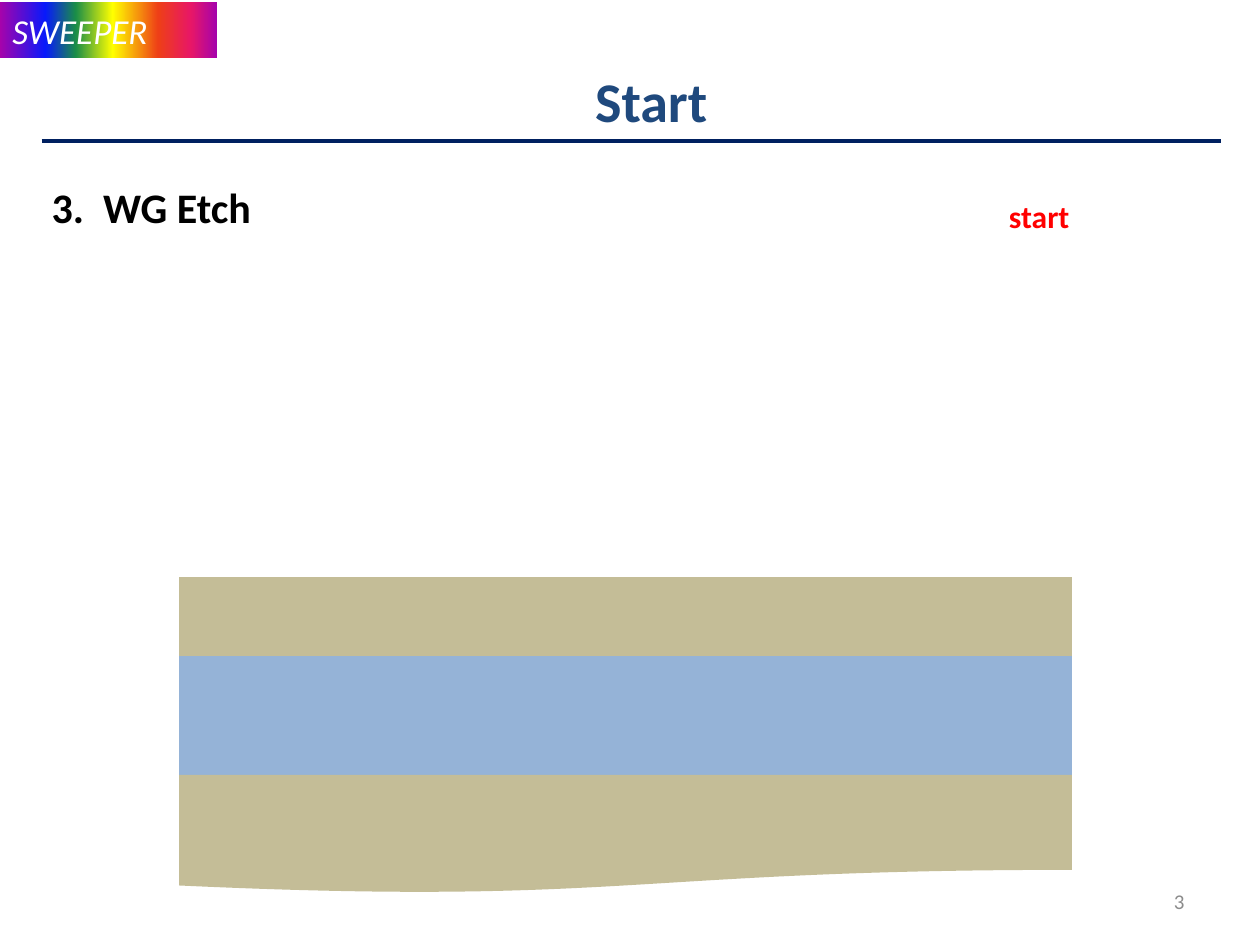
from dataclasses import dataclass

from lxml import etree
from pptx import Presentation
from pptx.dml.color import RGBColor
from pptx.enum import shapes, text
from pptx.oxml import parse_xml
from pptx.oxml.ns import nsdecls, qn
from pptx.util import Cm, Pt

FONT = "Calibri"
WHITE = RGBColor(0xFF, 0xFF, 0xFF)
BLACK = RGBColor(0x00, 0x00, 0x00)
RED = RGBColor(0xFF, 0x00, 0x00)
GREY = RGBColor(0x8C, 0x8C, 0x8C)
TITLE_BLUE = RGBColor(0x1F, 0x49, 0x7D)
RULE_NAVY = RGBColor(0x00, 0x20, 0x60)
SAND = RGBColor(0xC4, 0xBD, 0x97)
SKY = RGBColor(0x95, 0xB3, 0xD7)

VIOLET = RGBColor(0xA6, 0x03, 0xAB)
RAINBOW = [
    (0, VIOLET),
    (21, RGBColor(0x08, 0x19, 0xFB)),
    (35, RGBColor(0x1A, 0x8D, 0x48)),
    (52, RGBColor(0xFF, 0xFF, 0x00)),
    (73, RGBColor(0xEE, 0x3F, 0x17)),
    (88, RGBColor(0xE8, 0x17, 0x66)),
    (100, VIOLET),
]

STACK_LEFT, STACK_TOP, STACK_WIDTH = 3.61, 11.63, 18.0


@dataclass
class Layer:
    kind: shapes.MSO_SHAPE
    height: float
    color: RGBColor


@dataclass
class Label:
    words: str
    left: float
    top: float
    width: float
    height: float
    size: int
    color: RGBColor
    bold: bool = True
    wrap: bool = False
    align: text.PP_ALIGN = text.PP_ALIGN.LEFT
    anchor: text.MSO_ANCHOR = text.MSO_ANCHOR.TOP
    hanging: float = 0


# From the top of the wafer down
LAYERS = [
    Layer(shapes.MSO_SHAPE.FLOWCHART_PROCESS, 1.6, SAND),
    Layer(shapes.MSO_SHAPE.FLOWCHART_PROCESS, 2.39, SKY),
    Layer(shapes.MSO_SHAPE.FLOWCHART_DOCUMENT, 2.39, SAND),
]

LABELS = [
    Label("3.\tWG Etch", 0.79, 3.53, 4.57, 1.27, 24, BLACK, hanging=1.04),
    Label("start", 20.09, 3.84, 1.75, 1.02, 18, RED),
    Label("3", 18.21, 17.65, 5.92, 1.02, 12, GREY, bold=False, wrap=True,
          align=text.PP_ALIGN.RIGHT, anchor=text.MSO_ANCHOR.MIDDLE),
]


def set_font(para, size: int, color: RGBColor, bold=False, italic=False) -> None:
    font = para.font
    font.name, font.size = FONT, Pt(size)
    font.bold, font.italic = bold, italic
    font.color.rgb = color


def fill_rainbow(shape) -> None:
    stops = "".join(
        f'<a:gs pos="{percent * 1000}"><a:srgbClr val="{color}"/></a:gs>'
        for percent, color in RAINBOW
    )
    gradient = parse_xml(
        f'<a:gradFill {nsdecls("a")} rotWithShape="1"><a:gsLst>{stops}</a:gsLst>'
        '<a:lin ang="0" scaled="0"/></a:gradFill>'
    )
    shape.element.spPr.find(qn("a:prstGeom")).addnext(gradient)


def add_banner(slide) -> None:
    banner = slide.shapes.add_shape(
        shapes.MSO_SHAPE.RECTANGLE, Cm(0), Cm(0.05), Cm(4.37), Cm(1.12))
    banner.shadow.inherit = False
    fill_rainbow(banner)
    banner.line.fill.background()
    para = banner.text_frame.paragraphs[0]
    para.text = "SWEEPER"
    para.alignment = text.PP_ALIGN.LEFT
    set_font(para, 20, WHITE, italic=True)


def add_title_rule(slide) -> None:
    rule = slide.shapes.add_connector(
        shapes.MSO_CONNECTOR.STRAIGHT, Cm(0.84), Cm(2.84), Cm(24.61), Cm(2.84))
    rule.line.color.rgb = RULE_NAVY
    rule.line.width = Pt(2)
    etree.SubElement(rule.element.spPr, qn("a:effectLst"))


def format_title(slide) -> None:
    title = slide.shapes.title
    title.left, title.top = Cm(2.97), Cm(1.22)
    title.width, title.height = Cm(20.32), Cm(1.55)
    frame = title.text_frame
    frame.text = "Start"
    frame.auto_size = text.MSO_AUTO_SIZE.NONE
    frame.vertical_anchor = text.MSO_ANCHOR.TOP
    para = frame.paragraphs[0]
    para.alignment = text.PP_ALIGN.CENTER
    set_font(para, 32, TITLE_BLUE, bold=True)


def add_layers(slide, layers: list[Layer]) -> None:
    top = STACK_TOP
    for layer in layers:
        shape = slide.shapes.add_shape(
            layer.kind, Cm(STACK_LEFT), Cm(top), Cm(STACK_WIDTH), Cm(layer.height))
        shape.shadow.inherit = False
        shape.fill.solid()
        shape.fill.fore_color.rgb = layer.color
        shape.line.fill.background()
        top += layer.height


def add_label(slide, label: Label) -> None:
    box = slide.shapes.add_textbox(
        Cm(label.left), Cm(label.top), Cm(label.width), Cm(label.height))
    frame = box.text_frame
    frame.word_wrap = label.wrap
    frame.vertical_anchor = label.anchor
    para = frame.paragraphs[0]
    para.text = label.words
    para.alignment = label.align
    if label.hanging:
        properties = para._p.get_or_add_pPr()
        properties.set("marL", str(Cm(label.hanging)))
        properties.set("indent", str(-Cm(label.hanging)))
    set_font(para, label.size, label.color, bold=label.bold)


def main() -> None:
    deck = Presentation()
    deck.slide_width, deck.slide_height = Cm(25.4), Cm(19.05)
    slide = deck.slides.add_slide(deck.slide_layouts.get_by_name("Title Only"))
    add_banner(slide)
    add_title_rule(slide)
    format_title(slide)
    add_layers(slide, LAYERS)
    for label in LABELS:
        add_label(slide, label)
    deck.save("out.pptx")


if __name__ == "__main__":
    main()
